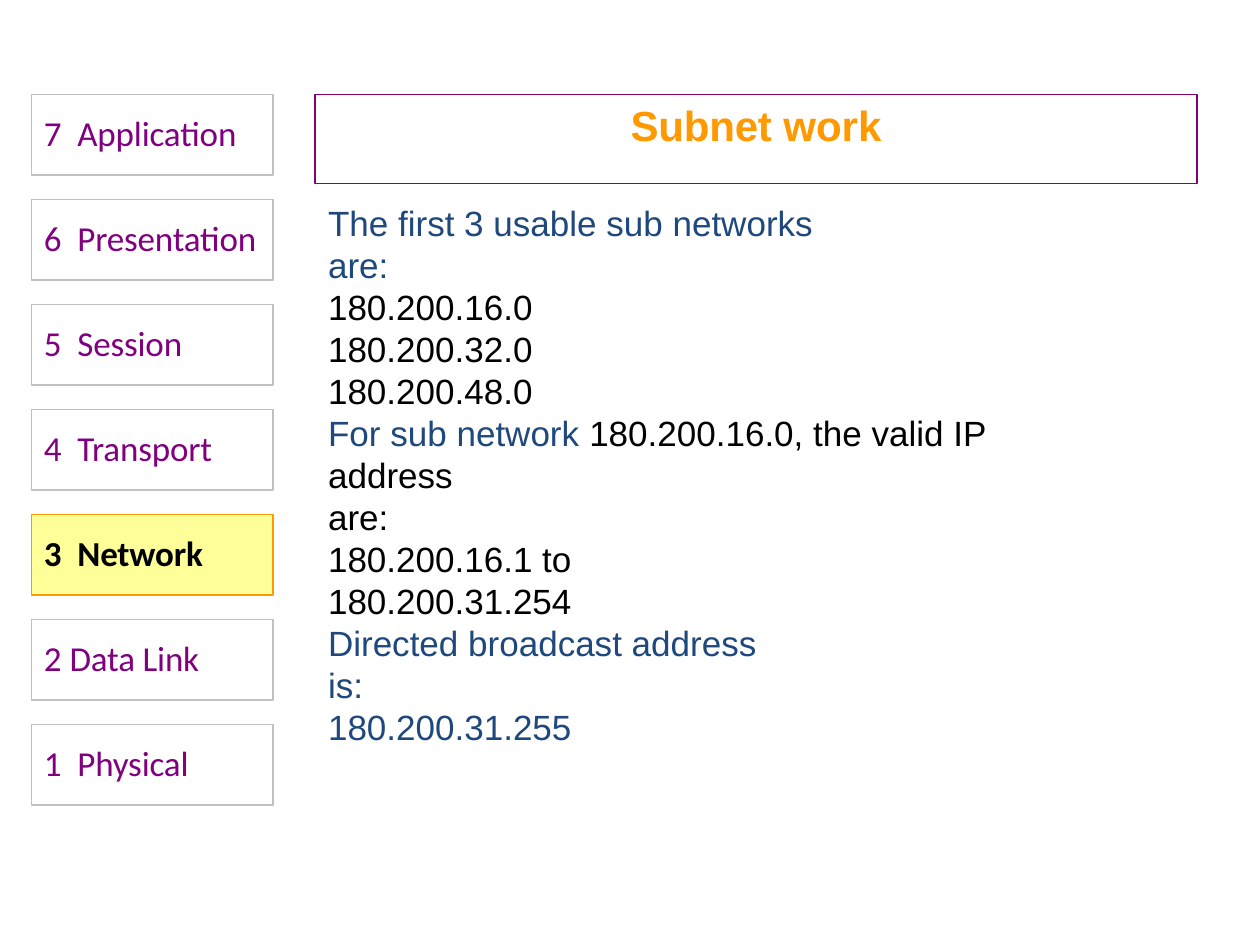
import pptx
import pptx.util
import pptx.dml.color
import pptx.enum.shapes
import pptx.enum.text

Pt = pptx.util.Pt
PURPLE, ORANGE, NAVY, BLACK = "800080", "FF9900", "1F487C", "000000"
SILVER, YELLOW = "C0C0C0", "FFFF99"
LAYERS = ["Physical", "Data Link", "Network", "Transport",
          "Session", "Presentation", "Application"]
ACTIVE = "Network"
BODY = [
    (114, 318, [[("The first 3 usable sub networks are:", NAVY)],
                [("180.200.16.0", BLACK)],
                [("180.200.32.0", BLACK)],
                [("180.200.48.0", BLACK)]]),
    (234, 453, [[("For sub network ", NAVY),
                 ("180.200.16.0, the valid IP address", BLACK)],
                [("are:", BLACK)]]),
    (306, 285, [[("180.200.16.1 to 180.200.31.254", BLACK)]]),
    (354, 271, [[("Directed broadcast address is:", NAVY)]]),
    (402, 141, [[("180.200.31.255", NAVY)]]),
]


def rgb(value):
    """Turn a hex string into a colour."""
    return pptx.dml.color.RGBColor.from_string(value)


def add_run(p, text, font, size, color, bold=False, spacing=0):
    """Append a formatted run, with letter spacing in points."""
    r = p.add_run()
    r.text = text
    r.font.name = font
    r.font.size = Pt(size)
    r.font.bold = bold
    r.font.color.rgb = rgb(color)
    if spacing:
        r.font._element.set("spc", str(round(spacing * 100)))


def set_frame(s, left, top):
    """Give a shape a wrapping, top-anchored text frame."""
    tf = s.text_frame
    tf.word_wrap = True
    tf.auto_size = pptx.enum.text.MSO_AUTO_SIZE.NONE
    tf.vertical_anchor = pptx.enum.text.MSO_ANCHOR.TOP
    tf.margin_left, tf.margin_top = Pt(left), Pt(top)
    tf.margin_right = tf.margin_bottom = 0
    return tf


def set_outline(s, color):
    """Draw a thin outline."""
    s.line.color.rgb = rgb(color)
    s.line.width = Pt(0.75)


def add_title(slide):
    """Place and format the title."""
    s = slide.shapes.title
    s.left, s.top, s.width, s.height = Pt(180), Pt(54), Pt(504), Pt(51)
    set_outline(s, PURPLE)
    p = set_frame(s, 0, 3).paragraphs[0]
    p.alignment = pptx.enum.text.PP_ALIGN.CENTER
    p.space_before = Pt(3)
    add_run(p, "Subnet ", "Arial", 24, ORANGE, True, -0.1)
    add_run(p, "work", "Arial", 24, ORANGE, True)


def add_layer(slide, number, name):
    """Add one box of the layer stack, numbered from the bottom."""
    top = 54 + 60 * (len(LAYERS) - number)
    s = slide.shapes.add_shape(pptx.enum.shapes.MSO_SHAPE.RECTANGLE,
                               Pt(18), Pt(top), Pt(138), Pt(46))
    s.shadow.inherit = False
    active = name == ACTIVE
    if active:
        s.fill.solid()
        s.fill.fore_color.rgb = rgb(YELLOW)
    else:
        s.fill.background()
    set_outline(s, ORANGE if active else SILVER)
    p = set_frame(s, 7.2, 9.5).paragraphs[0]
    p.alignment = pptx.enum.text.PP_ALIGN.LEFT
    color = BLACK if active else PURPLE
    gap = 0 if name == "Data Link" else 2.25
    add_run(p, f"{number} ", "Calibri", 20, color, active, gap)
    add_run(p, name, "Calibri", 20, color, active, -0.1)


def add_body(slide, top, width, lines):
    """Add a text box with one paragraph for each list of runs."""
    s = slide.shapes.add_textbox(Pt(186.5), Pt(top), Pt(width),
                                 Pt(24 * len(lines) + 2))
    tf = set_frame(s, 1, 1)
    for i, runs in enumerate(lines):
        p = tf.add_paragraph() if i else tf.paragraphs[0]
        p.line_spacing = Pt(24)
        for text, color in runs:
            add_run(p, text, "Arial", 20, color)


def main():
    """Build and save the slide."""
    prs = pptx.Presentation()
    prs.slide_width, prs.slide_height = Pt(720), Pt(540)
    slide = prs.slides.add_slide(prs.slide_layouts[5])
    add_title(slide)
    for number, name in enumerate(LAYERS, 1):
        add_layer(slide, number, name)
    for top, width, lines in BODY:
        add_body(slide, top, width, lines)
    prs.save("out.pptx")


if __name__ == "__main__":
    main()
